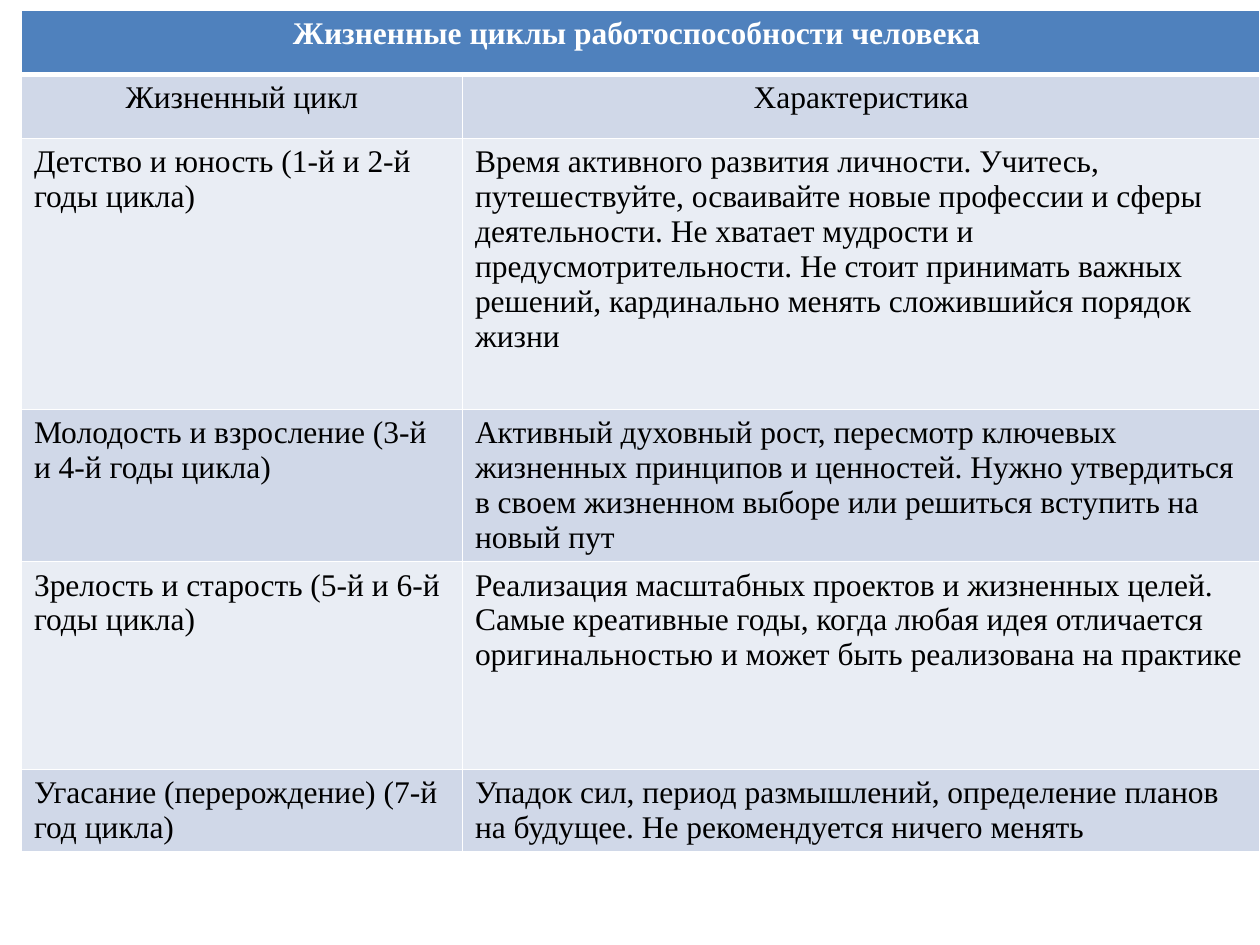
from lxml import etree
from pptx import Presentation
from pptx.dml.color import RGBColor
from pptx.enum.text import PP_ALIGN
from pptx.oxml.ns import qn
from pptx.util import Inches, Pt

LEFT, CENTER = PP_ALIGN.LEFT, PP_ALIGN.CENTER
WHITE, BLACK = "FFFFFF", "000000"
HEADER, BAND_DARK, BAND_LIGHT = "4F81BD", "D0D8E8", "E9EDF4"

TITLE = "Жизненные циклы работоспособности человека "
CYCLES = [
    ("Жизненный цикл", "Характеристика"),
    ("Детство и юность (1-й и 2-й годы цикла)",
     "Время активного развития личности. Учитесь, путешествуйте, осваивайте "
     "новые профессии и сферы деятельности. Не хватает мудрости и "
     "предусмотрительности. Не стоит принимать важных решений, кардинально "
     "менять сложившийся порядок жизни"),
    ("Молодость и взросление (3-й и 4-й годы цикла)",
     "Активный духовный рост, пересмотр ключевых жизненных принципов и "
     "ценностей. Нужно утвердиться в своем жизненном выборе или решиться "
     "вступить на новый пут"),
    ("Зрелость и старость (5-й и 6-й годы цикла)",
     "Реализация масштабных проектов и жизненных целей. Самые креативные годы, "
     "когда любая идея отличается оригинальностью и может быть реализована "
     "на практике"),
    ("Угасание (перерождение) (7-й год цикла)",
     "Упадок сил, период размышлений, определение планов на будущее. "
     "Не рекомендуется ничего менять"),
]
COL_WIDTHS = [3.5, 6.33]
ROW_HEIGHTS = [0.51, 0.51, 2.15, 0.51, 1.65, 0.51]


def rgb(value):
    return RGBColor.from_string(value)


class Deck:
    """Holds the text style and the current slide."""

    font = {"name": "Times New Roman", "size": Pt(18)}

    def __init__(self, width, height):
        self.prs = Presentation()
        self.prs.slide_width, self.prs.slide_height = Inches(width), Inches(height)
        self.s = self.prs.slides.add_slide(self.prs.slide_layouts[6])

    def table(self, left, top, cols, rows):
        sp = self.s.shapes.add_table(len(rows), len(cols), Inches(left), Inches(top),
                                     Inches(sum(cols)), Inches(sum(rows)))
        table = sp.table
        for parts, attr, sizes in ((table.columns, "width", cols),
                                   (table.rows, "height", rows)):
            for part, size in zip(parts, sizes):
                setattr(part, attr, Inches(size))
        return table

    def cell(self, cell, text, fill, color=BLACK, bold=False, align=LEFT, top=1, bottom=1):
        cell.fill.solid()
        cell.fill.fore_color.rgb = rgb(fill)
        self.borders(cell, {"L": 1, "R": 1, "T": top, "B": bottom})
        if not text:
            return
        p = cell.text_frame.paragraphs[0]
        p.alignment = align
        r = p.add_run()
        r.text = text
        for name, value in {**self.font, "bold": bold}.items():
            setattr(r.font, name, value)
        r.font.color.rgb = rgb(color)

    def borders(self, cell, widths):
        tc_pr = cell._tc.get_or_add_tcPr()
        for i, (side, width) in enumerate(widths.items()):
            ln = etree.Element(qn(f"a:ln{side}"), w=str(Pt(width)))
            fill = etree.SubElement(ln, qn("a:solidFill"))
            etree.SubElement(fill, qn("a:srgbClr"), val=WHITE)
            tc_pr.insert(i, ln)


def main():
    deck = Deck(10, 7.5)
    table = deck.table(0.17, 0.08, COL_WIDTHS, ROW_HEIGHTS)

    # Heading across both columns
    table.cell(0, 0).merge(table.cell(0, 1))
    for col, text in enumerate((TITLE, "")):
        deck.cell(table.cell(0, col), text, HEADER, WHITE, True, CENTER, bottom=3)

    # Column names and cycles, in alternating bands
    for row, texts in enumerate(CYCLES, start=1):
        first = row == 1
        for col, text in enumerate(texts):
            deck.cell(table.cell(row, col), text,
                      BAND_DARK if row % 2 else BAND_LIGHT,
                      align=CENTER if first else LEFT, top=3 if first else 1)

    deck.prs.save("out.pptx")


if __name__ == "__main__":
    main()
